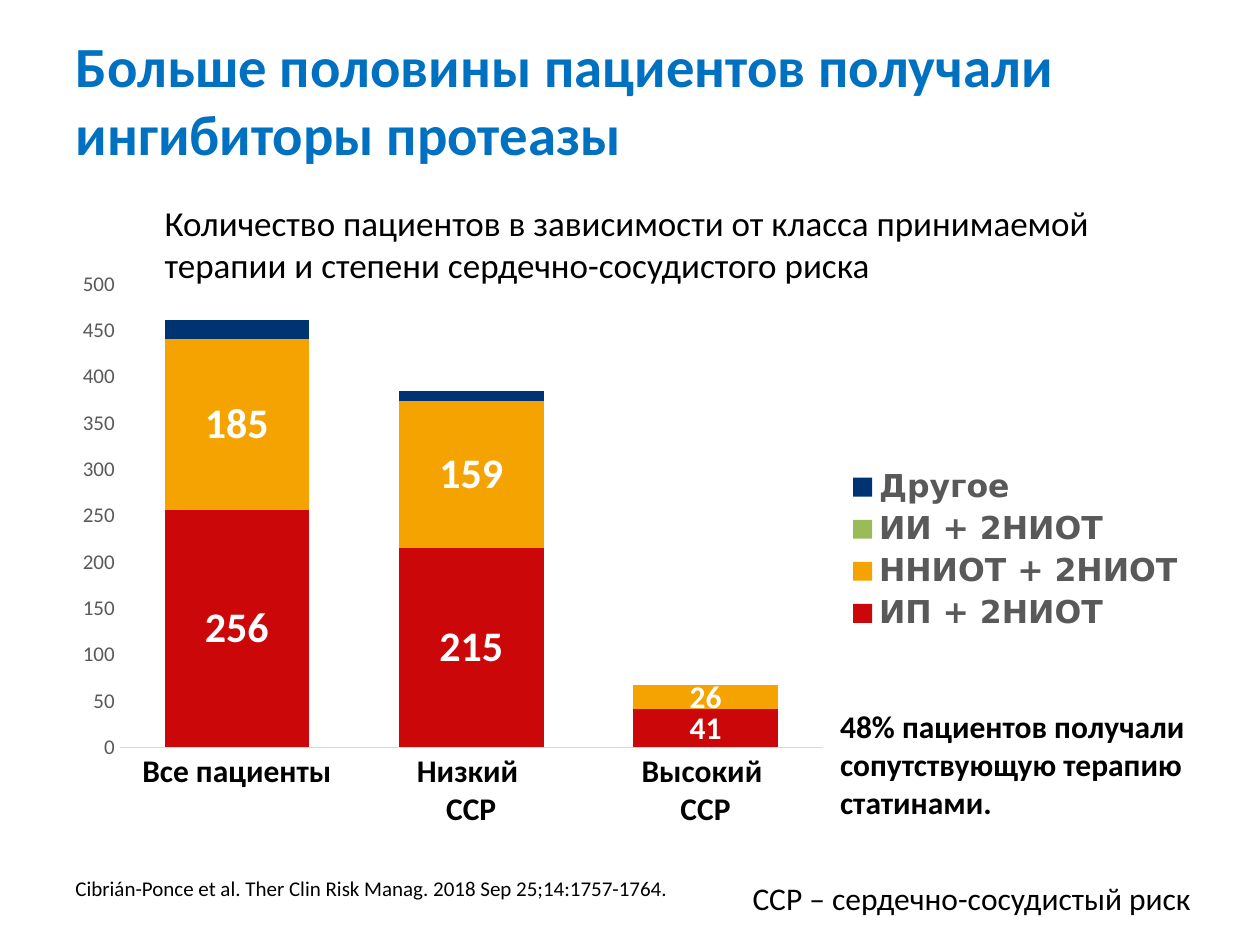
from lxml.etree import SubElement
from pptx import Presentation
from pptx.chart.data import CategoryChartData
from pptx.dml.color import RGBColor
from pptx.enum.chart import XL_CHART_TYPE, XL_LABEL_POSITION, XL_LEGEND_POSITION, XL_TICK_MARK
from pptx.enum.text import MSO_ANCHOR, PP_ALIGN
from pptx.oxml.ns import qn
from pptx.util import Pt

BLUE = RGBColor(0x00, 0x70, 0xC0)
BLACK = RGBColor(0x00, 0x00, 0x00)
WHITE = RGBColor(0xFF, 0xFF, 0xFF)
GREY = RGBColor(0x59, 0x59, 0x59)
LIGHT_GREY = RGBColor(0xD9, 0xD9, 0xD9)
RED = RGBColor(0xCB, 0x07, 0x09)
ORANGE = RGBColor(0xF5, 0xA3, 0x01)
GREEN = RGBColor(0x9B, 0xBB, 0x59)
NAVY = RGBColor(0x00, 0x33, 0x72)

CATEGORIES = ["Все пациенты", "Низкий \nССР", "Высокий \nССР"]
# Name, values, colour, whether the values are labelled
SERIES = [
    ("ИП + 2НИОТ", (256, 215, 41), RED, True),
    ("ННИОТ + 2НИОТ", (185, 159, 26), ORANGE, True),
    ("ИИ + 2НИОТ", (0, 0, 0), GREEN, False),
    ("Другое", (20, 10, 0), NAVY, False),
]
SMALL_COLUMN = 2


def style_font(font, size, color=BLACK, bold=False, name="Calibri"):
    font.name = name
    font.size = Pt(size)
    font.bold = bold
    font.color.rgb = color


def place(shape, left, top, width, height):
    shape.left, shape.top = Pt(left), Pt(top)
    shape.width, shape.height = Pt(width), Pt(height)


def add_title(page, text):
    title = page.shapes.title
    place(title, 36, 11.5, 648, 90)
    title.text_frame.text = text
    title.text_frame.vertical_anchor = MSO_ANCHOR.MIDDLE
    para = title.text_frame.paragraphs[0]
    para.alignment = PP_ALIGN.LEFT
    style_font(para.runs[0].font, 32.4, BLUE, bold=True)


def add_text(page, text, area, size, bold=False):
    box = page.shapes.add_textbox(*map(Pt, area))
    box.text_frame.word_wrap = True
    box.text_frame.text = text
    style_font(box.text_frame.paragraphs[0].runs[0].font, size, bold=bold)


def make_layout(parent, left, top, width, height, inner=False):
    """Give a chart part a fixed place, in fractions of the chart."""
    for old in parent.findall(qn("c:layout")):
        parent.remove(old)
    layout = SubElement(parent, qn("c:layout"))
    manual = SubElement(layout, qn("c:manualLayout"))
    settings = [("layoutTarget", "inner")] if inner else []
    settings += [("xMode", "edge"), ("yMode", "edge"),
                 ("x", left), ("y", top), ("w", width), ("h", height)]
    for tag, value in settings:
        SubElement(manual, qn(f"c:{tag}")).set("val", str(value))
    return layout


def format_axes(chart):
    category, value = chart.category_axis, chart.value_axis
    for axis in (category, value):
        axis.major_tick_mark = axis.minor_tick_mark = XL_TICK_MARK.NONE
        axis.has_major_gridlines = False
    style_font(category.tick_labels.font, 18, bold=True)
    category.format.line.color.rgb = LIGHT_GREY
    category.format.line.width = Pt(0.75)
    style_font(value.tick_labels.font, 12, GREY)
    value.format.line.fill.background()
    value.minimum_scale, value.maximum_scale, value.major_unit = 0, 500, 50


def format_legend(chart):
    chart.has_legend = True
    legend = chart.legend
    legend.position = XL_LEGEND_POSITION.RIGHT
    legend.include_in_layout = False
    style_font(legend.font, 18, GREY, bold=True, name="DejaVu Sans")
    element = legend._element
    layout = make_layout(element, 0.69, 0.35, 0.3, 0.3)
    element.find(qn("c:legendPos")).addnext(layout)


def label_series(series):
    labels = series.data_labels
    labels.show_value = True
    labels.position = XL_LABEL_POSITION.CENTER
    style_font(labels.font, 24, WHITE, bold=True)
    small = series.points[SMALL_COLUMN].data_label
    style_font(small.font, 18, WHITE, bold=True)
    small.position = XL_LABEL_POSITION.CENTER


def add_patient_chart(page):
    data = CategoryChartData()
    data.categories = CATEGORIES
    for name, values, _, _ in SERIES:
        data.add_series(name, values)
    frame = page.shapes.add_chart(
        XL_CHART_TYPE.COLUMN_STACKED, Pt(36), Pt(149), Pt(648), Pt(331), data)
    chart = frame.chart
    chart.has_title = False
    style_font(chart.font, 10)

    plot = chart.plots[0]
    plot.gap_width, plot.overlap = 62, 100
    plot.vary_by_categories = False
    for series, (_, _, color, labelled) in zip(plot.series, SERIES):
        series.format.fill.solid()
        series.format.fill.fore_color.rgb = color
        if labelled:
            label_series(series)

    format_axes(chart)
    format_legend(chart)
    area = plot._element.getparent()
    area.insert(0, make_layout(area, 0.05, 0.04, 0.62, 0.8, inner=True))


def main():
    deck = Presentation()
    deck.slide_width, deck.slide_height = Pt(720), Pt(540)
    page = deck.slides.add_slide(deck.slide_layouts[5])

    # Heading and chart
    add_title(page, "Больше половины пациентов получали ингибиторы протеазы")
    add_patient_chart(page)

    # Source, chart caption, finding and abbreviation
    add_text(page, "Cibrián-Ponce et al. Ther Clin Risk Manag. 2018 Sep 25;14:1757-1764.",
             (36, 497, 652, 28), 12)
    add_text(page, "Количество пациентов в зависимости от класса принимаемой терапии "
             "и степени сердечно-сосудистого риска", (87, 111.5, 601, 55.5), 20)
    add_text(page, "48% пациентов получали сопутствующую терапию статинами.",
             (473, 400.5, 238, 72.5), 18, bold=True)
    add_text(page, "ССР – сердечно-сосудистый риск", (423, 499, 289.5, 29), 18)

    deck.save("out.pptx")


if __name__ == "__main__":
    main()
